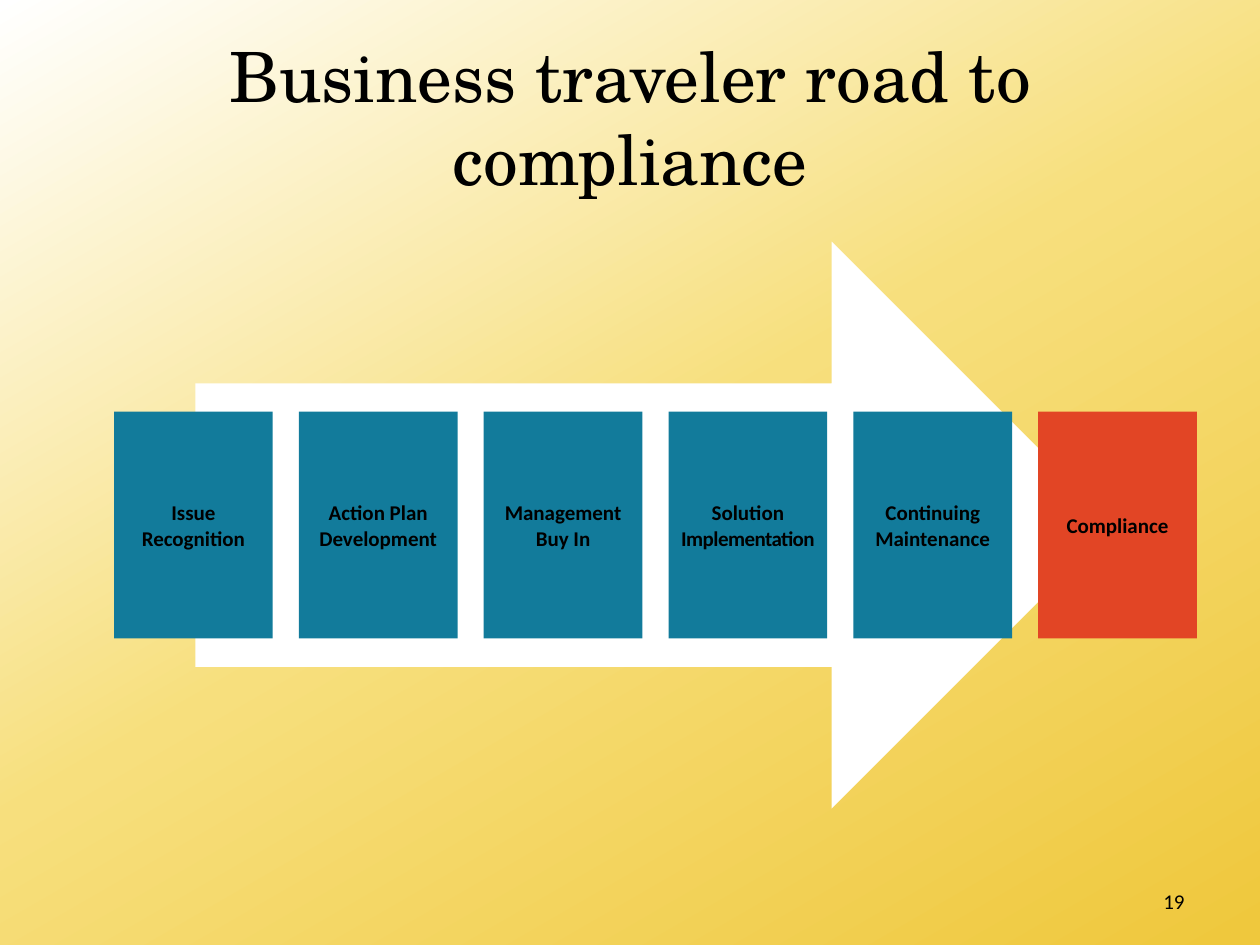
from copy import deepcopy

from pptx import Presentation
from pptx.dml.color import RGBColor
from pptx.enum.shapes import MSO_SHAPE
from pptx.enum.text import MSO_ANCHOR, PP_ALIGN
from pptx.util import Cm, Pt

RECTANGLE = MSO_SHAPE.RECTANGLE
RIGHT_ARROW = MSO_SHAPE.RIGHT_ARROW
MIDDLE = MSO_ANCHOR.MIDDLE
CENTER, RIGHT = PP_ALIGN.CENTER, PP_ALIGN.RIGHT

COLORS = {
    "white": "FFFFFF",
    "pale_gold": "F7DF7D",
    "gold": "EFC83D",
    "step": "127B9B",
    "goal": "E24525",
    "text": "000000",
}
BODY_FONT, TITLE_FONT = "Calibri", "TeX Gyre Schola"


def rgb(name):
    return RGBColor.from_string(COLORS[name])


class SlideBuilder:
    def __init__(self, slide):
        self.slide = slide

    def background(self, stops, angle):
        """Fill the background with (position, colour) stops."""
        fill = self.slide.background.fill
        fill.gradient()
        fill.gradient_angle = angle
        stop_list = self.slide.element.xpath(".//a:gsLst")[0]
        while len(stop_list) < len(stops):
            stop_list.append(deepcopy(stop_list[-1]))
        for stop, (position, color) in zip(fill.gradient_stops, stops):
            stop.position = position
            stop.color.rgb = rgb(color)

    def shape(self, kind, left, top, width, height, color):
        shape = self.slide.shapes.add_shape(kind, Cm(left), Cm(top), Cm(width), Cm(height))
        shape.shadow.inherit = False
        shape.fill.solid()
        shape.fill.fore_color.rgb = rgb(color)
        shape.line.fill.background()
        return shape

    def set_text(self, shape, text, size, align=CENTER, font=BODY_FONT, bold=False):
        frame = shape.text_frame
        frame.word_wrap = True
        frame.vertical_anchor = MIDDLE
        paragraph = frame.paragraphs[0]
        paragraph.text = text
        paragraph.alignment = align
        paragraph.font.name = font
        paragraph.font.size = Pt(size)
        paragraph.font.bold = bold
        paragraph.font.color.rgb = rgb("text")
        return paragraph

    def text(self, text, left, top, width, height, size, **style):
        box = self.slide.shapes.add_textbox(Cm(left), Cm(top), Cm(width), Cm(height))
        self.set_text(box, text, size, **style)

    def step(self, text, left, top, width, height, color, tight_word=None):
        """Draw one step; a tight word follows the text, slightly condensed."""
        box = self.shape(RECTANGLE, left, top, width, height, color)
        paragraph = self.set_text(box, text, 12, bold=True)
        paragraph.space_before = Pt(9)
        frame = box.text_frame
        frame.margin_top = frame.margin_bottom = Cm(0.13)
        frame.margin_left = frame.margin_right = Cm(0.05 if tight_word else 0.13)
        if tight_word:
            run = paragraph.add_run()
            run.text = tight_word
            run.font._element.set("spc", "-30")


def main():
    presentation = Presentation()
    presentation.slide_width, presentation.slide_height = Cm(25.4), Cm(19.05)
    builder = SlideBuilder(presentation.slides.add_slide(presentation.slide_layouts[6]))

    # Background and title
    builder.background([(0, "white"), (0.49, "pale_gold"), (0.99, "gold")], 300)
    builder.text("Business traveler road to compliance", 1.27, 0.76, 22.86, 3.18, 39.6,
                 font=TITLE_FONT)

    # Road arrow behind the steps
    builder.shape(RIGHT_ARROW, 3.94, 4.87, 18.54, 11.43, "white")

    # Evenly spaced steps, ending at the goal
    steps = [
        ("Issue Recognition", "step", None),
        ("Action Plan Development", "step", None),
        ("Management Buy In", "step", None),
        ("Solution ", "step", "Implementation"),
        ("Continuing Maintenance", "step", None),
        ("Compliance", "goal", None),
    ]
    first_left, last_left = 2.3, 20.93
    pitch = (last_left - first_left) / (len(steps) - 1)
    for index, (label, color, tight_word) in enumerate(steps):
        builder.step(label, first_left + index * pitch, 8.3, 3.2, 4.57, color, tight_word)

    # Page number
    builder.text("19", 18.2, 17.66, 5.93, 1.01, 12, align=RIGHT)

    presentation.save("out.pptx")


if __name__ == "__main__":
    main()
